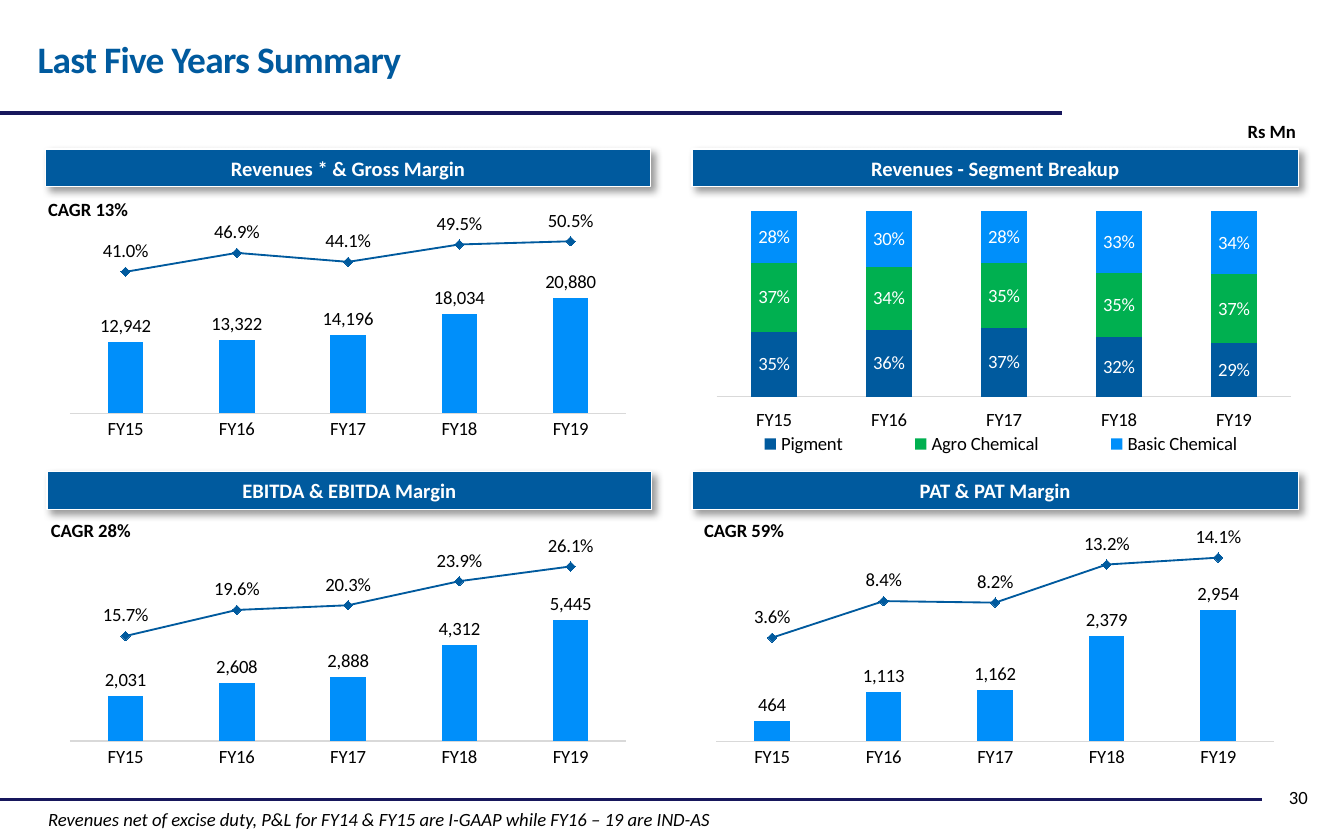
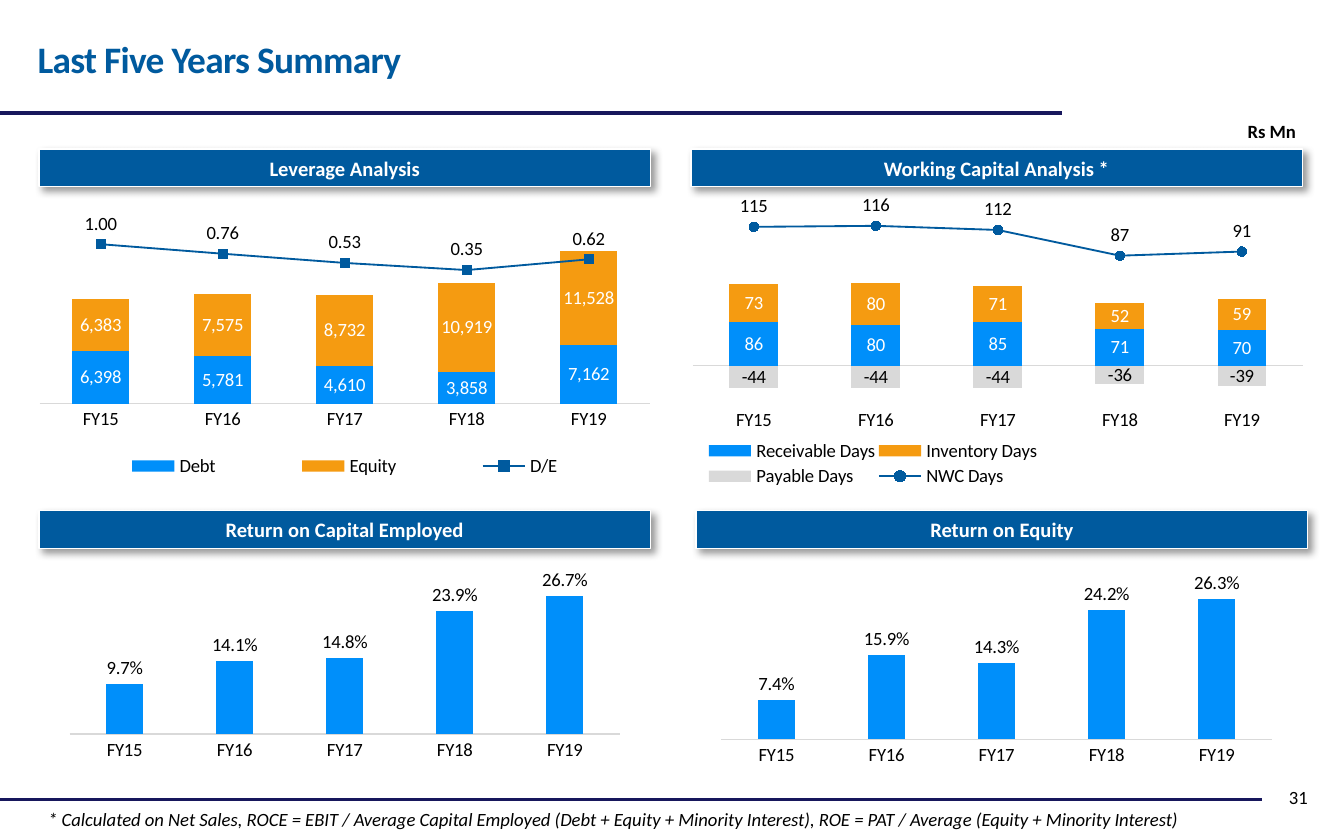
"""Build two slides that sum up five years of results in eight charts."""
import copy

from pptx import Presentation
from pptx import util as u
from pptx.chart.data import CategoryChartData
from pptx.dml.color import RGBColor
from pptx.enum import chart as ch
from pptx.enum import shapes, text
from pptx.oxml import parse_xml
from pptx.oxml.ns import nsdecls, qn

PX = 9144
FONT = "Calibri"
COLORS = {
    "navy": "005A9E", "rule": "17175C", "sky": "008FFA", "green": "00B050",
    "orange": "F59B11", "grey": "D9D9D9", "white": "FFFFFF", "black": "000000",
}
TITLE = "Last Five Years Summary"
UNIT = "Rs Mn"
FIRST_NUMBER = 30
YEARS = ["FY15", "FY16", "FY17", "FY18", "FY19"]
RULES = [(-2, 595, 939), (-1, 84, 790)]
BAND_HEIGHT = 28
KINDS = {
    "clustered": ch.XL_CHART_TYPE.COLUMN_CLUSTERED,
    "stacked": ch.XL_CHART_TYPE.COLUMN_STACKED,
    "share": ch.XL_CHART_TYPE.COLUMN_STACKED_100,
}
MARKERS = {
    "diamond": ch.XL_MARKER_STYLE.DIAMOND,
    "square": ch.XL_MARKER_STYLE.SQUARE,
    "circle": ch.XL_MARKER_STYLE.CIRCLE,
}


def margin_panel(heading, band, box, plot, cagr, cagr_at, amounts, left, margins, right):
    """Describe a panel of amounts in columns with a margin line above."""
    return {
        "heading": heading, "band": band, "box": box, "plot": plot, "kind": "clustered",
        "gap": 213, "overlap": 0, "left": left, "cagr": (cagr, cagr_at),
        "bars": [("Series 1", amounts, "sky", "black")], "format": "#,##0",
        "line": ("Series 2", margins, "diamond", "0.0%", right),
    }


def return_panel(heading, band, box, plot, rates):
    """Describe a panel with one row of percentage columns."""
    return {
        "heading": heading, "band": band, "box": box, "plot": plot, "kind": "clustered",
        "gap": 196, "overlap": -82, "left": (None, None),
        "bars": [("Series 1", rates, "sky", "black")], "format": "0.0%",
    }


SLIDES = [
    {
        "note": ("Revenues net of excise duty, P&L for FY14 & FY15 are I-GAAP "
                 "while FY16 – 19 are IND-AS", 568),
        "panels": [
            margin_panel("Revenues * & Gross Margin", (34, 111, 450), (34, 147, 450, 189),
                         (0.04, 0.09, 0.92, 0.76), "CAGR 13%", (26, 142),
                         [12942, 13322, 14196, 18034, 20880], (None, 35000),
                         [0.41, 0.469, 0.441, 0.495, 0.505], (None, 0.57)),
            {
                "heading": "Revenues - Segment Breakup", "band": (515, 111, 451),
                "box": (515, 138, 455, 242), "plot": (0.04, 0.08, 0.94, 0.57),
                "kind": "share", "gap": 150, "overlap": 100, "left": (0, 1), "low": True,
                "format": "0%", "legend": (0.01, 0.75, 0.99, 0.09),
                "bars": [
                    ("Pigment", [0.35, 0.36, 0.37, 0.32, 0.29], "navy", "white"),
                    ("Agro Chemical", [0.37, 0.34, 0.35, 0.35, 0.37], "green", "white"),
                    ("Basic Chemical", [0.28, 0.3, 0.28, 0.33, 0.34], "sky", "white"),
                ],
            },
            margin_panel("EBITDA & EBITDA Margin", (35, 351, 450), (34, 387, 450, 189),
                         (0.04, 0.08, 0.92, 0.79), "CAGR 28%", (28, 381),
                         [2031, 2608, 2888, 4312, 5445], (0, 9000),
                         [0.157, 0.196, 0.203, 0.239, 0.261], (None, 0.3)),
            margin_panel("PAT & PAT Margin", (515, 351, 451), (515, 391, 451, 189),
                         (0.04, 0.1, 0.92, 0.75), "CAGR 59%", (514, 381),
                         [464, 1113, 1162, 2379, 2954], (0, 4300),
                         [0.036, 0.084, 0.082, 0.132, 0.141], (-0.1, 0.15)),
        ],
    },
    {
        "note": ("* Calculated on Net Sales, ROCE = EBIT / Average Capital Employed (Debt + "
                 "Equity + Minority Interest), ROE = PAT / Average (Equity + Minority Interest)",
                 868),
        "panels": [
            {
                "heading": "Leverage Analysis", "band": (29, 111, 455),
                "box": (29, 139, 455, 221), "plot": (0, 0.18, 1, 0.55),
                "kind": "stacked", "gap": 115, "overlap": 100, "left": (None, 20000),
                "format": "#,##0", "legend": (0.02, 0.89, 0.96, 0.1),
                "bars": [
                    ("Debt", [6398, 5781, 4610, 3858, 7162], "sky", "white"),
                    ("Equity", [6383, 7575, 8732, 10919, 11528], "orange", "white"),
                ],
                "line": ("D/E", [1, 0.76, 0.53, 0.35, 0.62], "square", "0.00", (-3, 1.1)),
            },
            {
                "heading": "Working Capital Analysis *", "band": (514, 111, 455),
                "box": (515, 138, 455, 242), "plot": (0, 0.08, 1, 0.57),
                "kind": "stacked", "gap": 150, "overlap": 100, "left": (-60, 300), "low": True,
                "format": "0", "legend": (0.02, 0.77, 0.55, 0.17),
                "bars": [
                    ("Receivable Days", [86, 80, 85, 71, 70], "sky", "white"),
                    ("Inventory Days", [73, 80, 71, 52, 59], "orange", "white"),
                    ("Payable Days", [-44, -44, -44, -36, -39], "grey", "black"),
                ],
                "line": ("NWC Days", [115, 116, 112, 87, 91], "circle", "0", (-50, None)),
            },
            return_panel("Return on Capital Employed", (29, 380, 455), (29, 410, 455, 192),
                         (0.05, 0.11, 0.9, 0.6), [0.097, 0.141, 0.148, 0.239, 0.267]),
            return_panel("Return on Equity", (518, 380, 455), (514, 412, 455, 192),
                         (0.05, 0.1, 0.9, 0.62), [0.074, 0.159, 0.143, 0.242, 0.263]),
        ],
    },
]


def px(*lengths):
    """Turn px into EMU."""
    return [u.Emu(round(length * PX)) for length in lengths]


def rgb(name):
    """Look up a colour."""
    return RGBColor.from_string(COLORS[name])


def set_font(font, size=10, color="black", bold=False, italic=False):
    """Format a font."""
    font.name, font.size, font.bold, font.italic = FONT, u.Pt(size), bold, italic
    font.color.rgb = rgb(color)


def write(frame, words, align=text.PP_ALIGN.LEFT, **look):
    """Put one formatted paragraph in a frame."""
    frame.text = words
    frame.word_wrap = True
    paragraph = frame.paragraphs[0]
    paragraph.alignment = align
    set_font(paragraph.runs[0].font, **look)


def add_label(slide, words, box, **look):
    """Add a text box."""
    write(slide.shapes.add_textbox(*px(*box)).text_frame, words, **look)


def add_rules(slide, layout):
    """Draw the two rules and hand them to the shared layout."""
    for start, y, end in RULES:
        rule = slide.shapes.add_connector(shapes.MSO_CONNECTOR.STRAIGHT, *px(start, y, end, y))
        rule.line.color.rgb = rgb("rule")
        rule.line.width = u.Pt(1.75)
        rule._element.spPr.append(parse_xml(f"<a:effectLst {nsdecls('a')}/>"))
        layout.shapes._spTree.append(rule._element)


def add_title(slide):
    """Fill and place the title."""
    title = slide.shapes.title
    title.left, title.top, title.width, title.height = px(18, 22, 835, 44)
    write(title.text_frame, TITLE, size=20, color="navy", bold=True)
    title.text_frame.vertical_anchor = text.MSO_ANCHOR.TOP
    title.text_frame.auto_size = text.MSO_AUTO_SIZE.NONE
    title.text_frame.paragraphs[0].runs[0]._r.get_or_add_rPr().set("spc", "-40")


def add_number(slide, layout, number):
    """Add the slide number placeholder with its field."""
    source = next(holder for holder in layout.placeholders
                  if holder.placeholder_format.type == shapes.PP_PLACEHOLDER.SLIDE_NUMBER)
    slide.shapes._spTree.append(copy.deepcopy(source._element))
    holder = slide.shapes[-1]
    holder.left, holder.top, holder.width, holder.height = px(775, 572, 208, 42)
    holder.text_frame.vertical_anchor = text.MSO_ANCHOR.MIDDLE
    paragraph = holder.text_frame.paragraphs[0]
    paragraph.clear()
    paragraph.alignment = text.PP_ALIGN.RIGHT
    paragraph._p.append(parse_xml(
        f'<a:fld {nsdecls("a")} id="{{B6F15528-21DE-4FAA-801E-634DDDAF4B2B}}" type="slidenum">'
        f'<a:rPr lang="en-US" sz="1000"><a:solidFill><a:srgbClr val="{COLORS["black"]}"/>'
        f'</a:solidFill><a:latin typeface="{FONT}"/></a:rPr><a:t>{number}</a:t></a:fld>'))


def add_band(slide, heading, place):
    """Add a heading band with a soft shadow."""
    band = slide.shapes.add_shape(shapes.MSO_SHAPE.RECTANGLE, *px(*place, BAND_HEIGHT))
    band.fill.solid()
    band.fill.fore_color.rgb = rgb("navy")
    band.line.color.rgb = rgb("white")
    band.line.width = u.Pt(0.75)
    band.shadow.inherit = False
    band._element.spPr.find(qn("a:effectLst")).append(parse_xml(
        f'<a:outerShdw {nsdecls("a")} blurRad="50800" dist="38100" dir="2700000" algn="tl" '
        f'rotWithShape="0"><a:srgbClr val="{COLORS["black"]}"><a:alpha val="40000"/>'
        '</a:srgbClr></a:outerShdw>'))
    write(band.text_frame, heading, text.PP_ALIGN.CENTER, size=11, color="white", bold=True)
    band.text_frame.vertical_anchor = text.MSO_ANCHOR.MIDDLE


def set_layout(parent, index, box, target=""):
    """Fix the place of a chart part."""
    for old in parent.findall(qn("c:layout")):
        parent.remove(old)
    sides = "".join(f'<c:{side} val="{value}"/>' for side, value in zip("xywh", box))
    parent.insert(index, parse_xml(
        f'<c:layout {nsdecls("c")}><c:manualLayout>{target}<c:xMode val="edge"/>'
        f'<c:yMode val="edge"/>{sides}</c:manualLayout></c:layout>'))


def set_labels(series, number_format, color):
    """Show the values of a series."""
    labels = series.data_labels
    labels.show_value = True
    labels.number_format = number_format
    labels.number_format_is_linked = False
    set_font(labels.font, color=color)
    return labels


def move_to_line(chart, low, high):
    """Move the last series to a line on a second axis."""
    area = chart._chartSpace.chart.plotArea
    bars = area.find(qn("c:barChart"))
    series = bars.findall(qn("c:ser"))[-1]
    for flag in series.findall(qn("c:invertIfNegative")):
        series.remove(flag)
    lines = parse_xml(
        f'<c:lineChart {nsdecls("c")}><c:grouping val="standard"/><c:varyColors val="0"/>'
        '<c:marker val="1"/><c:axId val="3001"/><c:axId val="3002"/></c:lineChart>')
    lines.insert(2, series)
    bars.addnext(lines)
    limits = "".join(f'<c:{name} val="{value}"/>' for name, value in (("max", high), ("min", low))
                     if value is not None)
    axis = ('<c:{tag} {ns}><c:axId val="{own}"/><c:scaling><c:orientation val="minMax"/>{limits}'
            '</c:scaling><c:delete val="{hidden}"/><c:axPos val="{side}"/>'
            '<c:majorTickMark val="none"/><c:minorTickMark val="none"/><c:tickLblPos val="none"/>'
            '<c:spPr><a:ln><a:noFill/></a:ln></c:spPr>'
            '<c:crossAx val="{other}"/><c:crosses val="{cross}"/></c:{tag}>')
    last = area.findall(qn("c:valAx"))[-1]
    for tag, own, other, bounds, hidden, side, cross in (
            ("catAx", 3001, 3002, "", 1, "b", "autoZero"),
            ("valAx", 3002, 3001, limits, 0, "r", "max")):
        new = parse_xml(axis.format(tag=tag, ns=nsdecls("c", "a"), own=own, other=other,
                                    limits=bounds, hidden=hidden, side=side, cross=cross))
        last.addnext(new)
        last = new


def style_line(series, marker, number_format):
    """Format the line series."""
    series.smooth = False
    series.format.line.color.rgb = rgb("navy")
    series.format.line.width = u.Pt(1)
    series.marker.style = MARKERS[marker]
    series.marker.size = 5
    series.marker.format.fill.solid()
    series.marker.format.fill.fore_color.rgb = rgb("navy")
    series.marker.format.line.color.rgb = rgb("navy")
    set_labels(series, number_format, "black").position = ch.XL_LABEL_POSITION.ABOVE


def style_axes(chart, panel):
    """Format the year axis and hide the value axis."""
    years, values = chart.category_axis, chart.value_axis
    for axis in (years, values):
        axis.has_major_gridlines = False
        axis.major_tick_mark = axis.minor_tick_mark = ch.XL_TICK_MARK.NONE
        set_font(axis.tick_labels.font)
    years.format.line.color.rgb = rgb("grey")
    years.format.line.width = u.Pt(0.75)
    if panel.get("low"):
        years.tick_label_position = ch.XL_TICK_LABEL_POSITION.LOW
    values.tick_label_position = ch.XL_TICK_LABEL_POSITION.NONE
    values.format.line.fill.background()
    values.minimum_scale, values.maximum_scale = panel["left"]


def add_panel_chart(slide, panel):
    """Add the chart of a panel."""
    line = panel.get("line")
    data = CategoryChartData()
    data.categories = YEARS
    for name, values, *_ in panel["bars"] + ([line] if line else []):
        data.add_series(name, values)
    chart = slide.shapes.add_chart(KINDS[panel["kind"]], *px(*panel["box"]), data).chart
    chart.has_title = False
    set_font(chart.font)
    style_axes(chart, panel)
    if line:
        move_to_line(chart, *line[4])
        style_line(chart.plots[1].series[0], line[2], line[3])
    columns = chart.plots[0]
    columns.gap_width, columns.overlap = panel["gap"], panel["overlap"]
    columns.vary_by_categories = False
    for series, (_, _, color, label_color) in zip(columns.series, panel["bars"]):
        series.invert_if_negative = False
        series.format.fill.solid()
        series.format.fill.fore_color.rgb = rgb(color)
        set_labels(series, panel["format"], label_color)
    set_layout(chart._chartSpace.chart.plotArea, 0, panel["plot"],
               '<c:layoutTarget val="inner"/>')
    chart.has_legend = "legend" in panel
    if chart.has_legend:
        chart.legend.position = ch.XL_LEGEND_POSITION.BOTTOM
        chart.legend.include_in_layout = False
        set_font(chart.legend.font)
        set_layout(chart.legend._element, 1, panel["legend"])


def main():
    """Build and save the slides."""
    deck = Presentation()
    deck.slide_width, deck.slide_height = px(1000, 625)
    deck.element.set("firstSlideNum", str(FIRST_NUMBER))
    layout = deck.slide_layouts[5]
    for number, content in enumerate(SLIDES, FIRST_NUMBER):
        slide = deck.slides.add_slide(layout)
        if number == FIRST_NUMBER:
            add_rules(slide, layout)
        add_title(slide)
        add_number(slide, layout, number)
        add_label(slide, UNIT, (785, 84, 189, 27), align=text.PP_ALIGN.RIGHT, bold=True)
        for panel in content["panels"]:
            add_band(slide, panel["heading"], panel["band"])
            add_panel_chart(slide, panel)
            if "cagr" in panel:
                words, place = panel["cagr"]
                add_label(slide, words, (*place, 275, 27), bold=True)
        note, width = content["note"]
        add_label(slide, note, (26, 596, width, 44), italic=True)
    deck.save("out.pptx")


if __name__ == "__main__":
    main()
